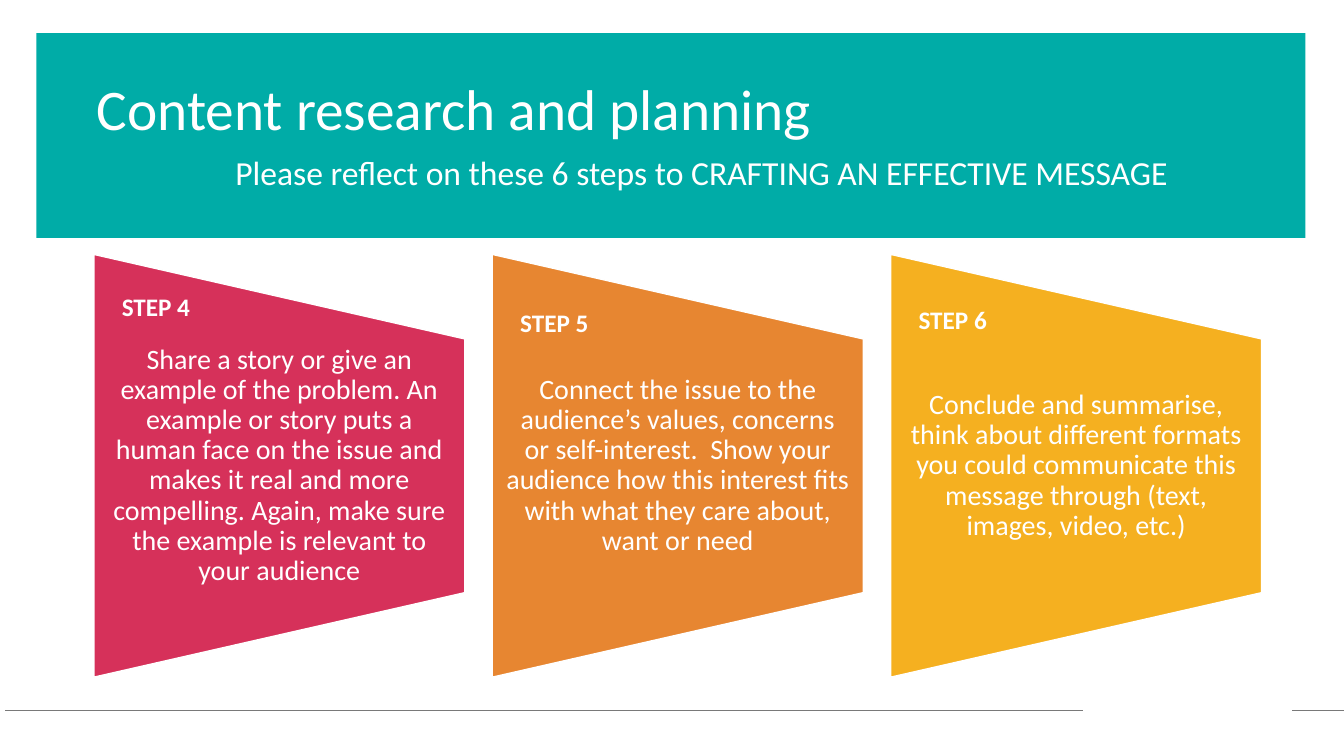
from pptx import Presentation
from pptx.dml.color import RGBColor as RGB
from pptx.enum.shapes import MSO_CONNECTOR as Link, MSO_SHAPE as Kind
from pptx.enum.text import MSO_ANCHOR as Anchor, PP_ALIGN as Align
from pptx.oxml.ns import qn
from pptx.util import Pt
from lxml.etree import SubElement

TITLE = "Content research and planning"
LEAD = "Please reflect on these 6 steps to CRAFTING AN EFFECTIVE MESSAGE"
STEPS = [
    ("STEP 4", "Share a story or give an example of the problem. An example or story "
     "puts a human face on the issue and makes it real and more compelling. "
     "Again, make sure the example is relevant to your audience", "D6315A", 204.5),
    ("STEP 5", "Connect the issue to the audience’s values, concerns or self-interest.  "
     "Show your audience how this interest fits with what they care about, "
     "want or need", "E78631", 216),
    ("STEP 6", "Conclude and summarise, think about different formats you could "
     "communicate this message through (text, images, video, etc.)", "F5B020", 213.8),
]
RULES = [(773.3, 3.6), (960, 923)]
THEME = {
    "font": "Calibri", "white": "FFFFFF", "teal": "00ACA7", "grey": "797979",
    "title": 41, "lead": 24, "body": 20, "label": 18,
}
LEFT, PITCH, WIDE, TALL, MID = 67, 284.6, 265, 302, 332.7
BODY = 181.5

deck = Presentation()
deck.slide_width, deck.slide_height = Pt(960), Pt(540)
slide = deck.slides.add_slide(deck.slide_layouts[6])


def paint(shape, color, edge=None):
    shape.shadow.inherit = False
    shape.fill.solid()
    shape.fill.fore_color.rgb = RGB.from_string(color)
    if edge:
        shape.line.color.rgb = RGB.from_string(edge)
        shape.line.width = Pt(1)
    else:
        shape.line.fill.background()


def write(box, lines, wrap=True, anchor=Anchor.TOP, side=7.2, edge=3.6,
          bold=False, space=None, before=0):
    frame = slide.shapes.add_textbox(*map(Pt, box)).text_frame
    frame.word_wrap = wrap
    frame.vertical_anchor = anchor
    frame.margin_left = frame.margin_right = Pt(side)
    frame.margin_top = frame.margin_bottom = Pt(edge)
    for i, (text, size, align) in enumerate(lines):
        para = frame.paragraphs[0] if i == 0 else frame.add_paragraph()
        para.alignment = align
        para.line_spacing = space
        para.space_before = Pt(before)
        run = para.add_run()
        run.text = text
        font = run.font
        font.name, font.size, font.bold = THEME["font"], Pt(THEME[size]), bold
        font.color.rgb = RGB.from_string(THEME["white"])


banner = slide.shapes.add_shape(Kind.RECTANGLE, Pt(26), Pt(23.7), Pt(906.5), Pt(146.2))
paint(banner, THEME["teal"])

for start, end in RULES:
    rule = slide.shapes.add_connector(Link.STRAIGHT, Pt(start), Pt(507.5), Pt(end), Pt(507.5))
    rule.line.color.rgb = RGB.from_string(THEME["grey"])
    rule.line.width = Pt(0.5)
    SubElement(rule._element.spPr, qn("a:effectLst"))

for i, (label, text, color, top) in enumerate(STEPS):
    left = LEFT + i * PITCH
    panel = slide.shapes.add_shape(
        Kind.FLOWCHART_MANUAL_OPERATION, Pt(left + (WIDE - TALL) / 2),
        Pt(MID - WIDE / 2), Pt(TALL), Pt(WIDE))
    panel.rotation = 270
    paint(panel, color, THEME["white"])
    write((left, MID - BODY / 2, WIDE, BODY), [(text, "body", Align.CENTER)],
          anchor=Anchor.MIDDLE, side=10, edge=0, space=0.9)
    write((left + 12.9, top, 64, 29), [(label, "label", Align.LEFT)],
          wrap=False, bold=True)

write((62, 54, 878.4, 105.8),
      [(TITLE, "title", Align.LEFT), (LEAD, "lead", Align.CENTER)],
      space=0.9, before=10)

deck.save("out.pptx")
